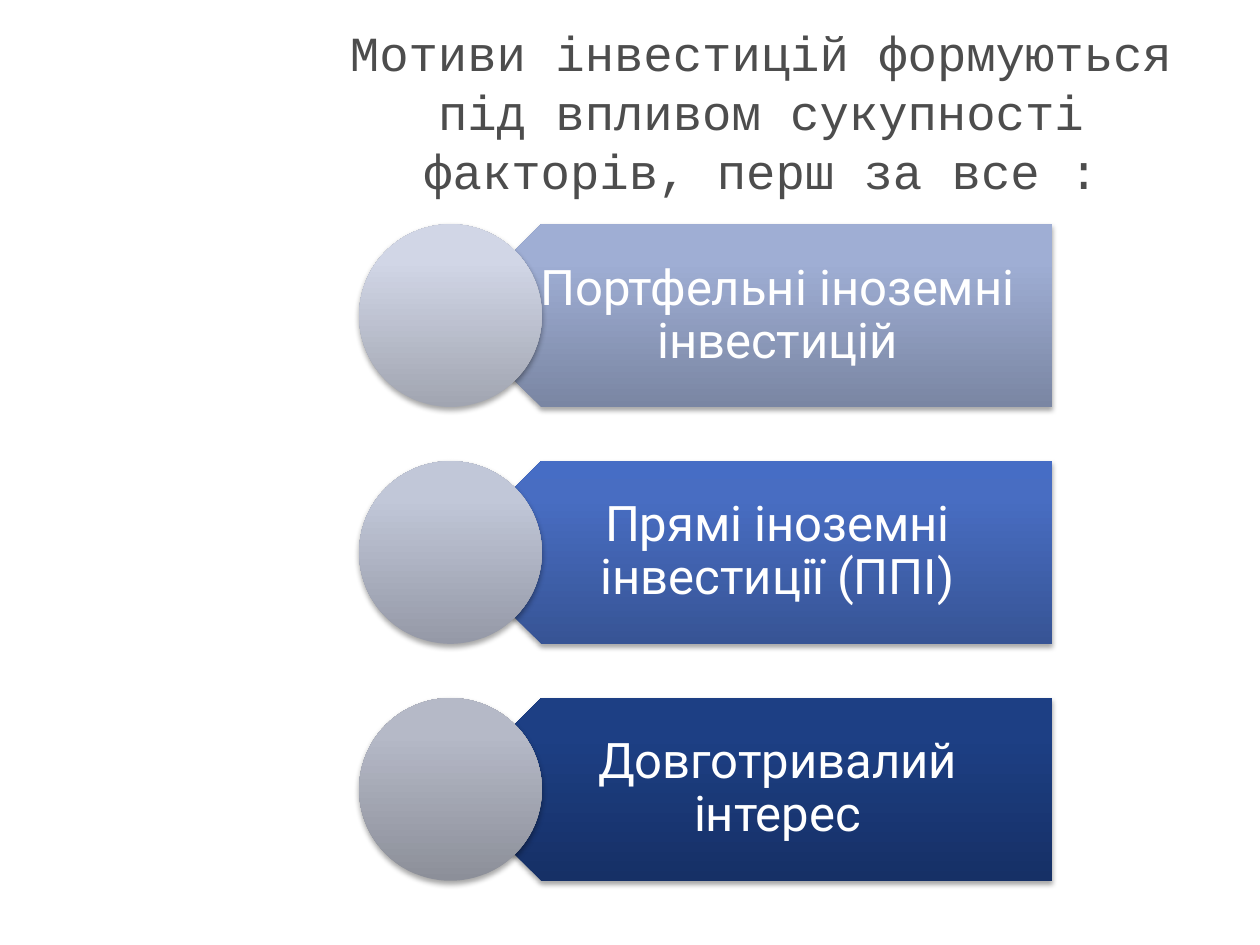
from lxml import etree
from pptx import Presentation
from pptx.dml.color import RGBColor
from pptx.enum import shapes, text
from pptx.oxml import ns
from pptx.util import Inches, Pt


def write(frame, words, *, font, color, size=28, spacing=1.0, insets=(0.1, 0.05, 0.1, 0.05)):
    frame.word_wrap = True
    frame.auto_size = text.MSO_AUTO_SIZE.NONE
    frame.vertical_anchor = text.MSO_ANCHOR.MIDDLE
    (frame.margin_left, frame.margin_top,
     frame.margin_right, frame.margin_bottom) = map(Inches, insets)
    paragraph = frame.paragraphs[0]
    paragraph.alignment = text.PP_ALIGN.CENTER
    paragraph.line_spacing = spacing
    run = paragraph.add_run()
    run.text = words
    run.font.name = font
    run.font.size = Pt(size)
    run.font.bold = False
    run.font.color.rgb = RGBColor.from_string(color)


def shade(shape, colors):
    """Give a shape an upward three-stop gradient and a soft shadow below it."""
    shape.line.fill.background()
    shape.fill.gradient()
    shape.fill.gradient_angle = 90
    gradient = shape._element.spPr.find(ns.qn("a:gradFill"))
    gradient.set("rotWithShape", "0")
    stops = gradient.find(ns.qn("a:gsLst"))
    stops.clear()
    for position, color in zip((0, 80, 100), colors):
        stop = etree.SubElement(stops, ns.qn("a:gs"), pos=str(position * 1000))
        etree.SubElement(stop, ns.qn("a:srgbClr"), val=color)

    shape.shadow.inherit = False
    effects = shape._element.spPr.find(ns.qn("a:effectLst"))
    shadow = etree.SubElement(effects, ns.qn("a:outerShdw"), blurRad=str(Pt(3.1)),
                              dist=str(Pt(1.8)), dir="5400000", rotWithShape="0")
    black = etree.SubElement(shadow, ns.qn("a:srgbClr"), val="000000")
    etree.SubElement(black, ns.qn("a:alpha"), val="35000")


presentation = Presentation()
presentation.slide_width = Inches(10)
presentation.slide_height = Inches(7.5)
slide = presentation.slides.add_slide(presentation.slide_layouts[5])

heading = slide.shapes.title
heading.left, heading.top = Inches(2.25), Inches(0.72)
heading.width, heading.height = Inches(7.58), Inches(0.78)
# The deep bottom inset lifts the three lines above the middle of the box.
write(heading.text_frame,
      "Мотиви інвестицій формуються під впливом сукупності факторів, перш за все :",
      font="Courier New", color="4D4D4D", insets=(0.1, 0.05, 0.1, 0.51))

# Label, arrow gradient, circle gradient
motives = [
    ("Портфельні іноземні інвестицій",
     ("7A86A3", "9FAED4", "9EAED6"), ("A1A5B1", "D1D6E6", "D1D7E7")),
    ("Прямі іноземні інвестиції (ППІ)",
     ("375495", "486DC2", "466DC5"), ("9599A7", "C1C7D8", "C2C8DA")),
    ("Довготривалий інтерес",
     ("163066", "1D3F84", "1B3E87"), ("8C8F99", "B5B9C7", "B6BAC9")),
]
height = Inches(1.45)
for row, (motive, arrow_colors, circle_colors) in enumerate(motives):
    top = Inches(1.78 + 1.88 * row)
    band = Inches(3.57), top, Inches(4.78), height

    arrow = slide.shapes.add_shape(shapes.MSO_SHAPE.PENTAGON, *band)
    arrow.rotation = 180
    shade(arrow, arrow_colors)

    label = slide.shapes.add_textbox(*band)
    write(label.text_frame, motive, font="Roboto", color="FFFFFF",
          spacing=0.9, insets=(0.64, 0.12, 0.22, 0.12))

    circle = slide.shapes.add_shape(shapes.MSO_SHAPE.OVAL, Inches(2.85), top, height, height)
    shade(circle, circle_colors)

presentation.save("out.pptx")
